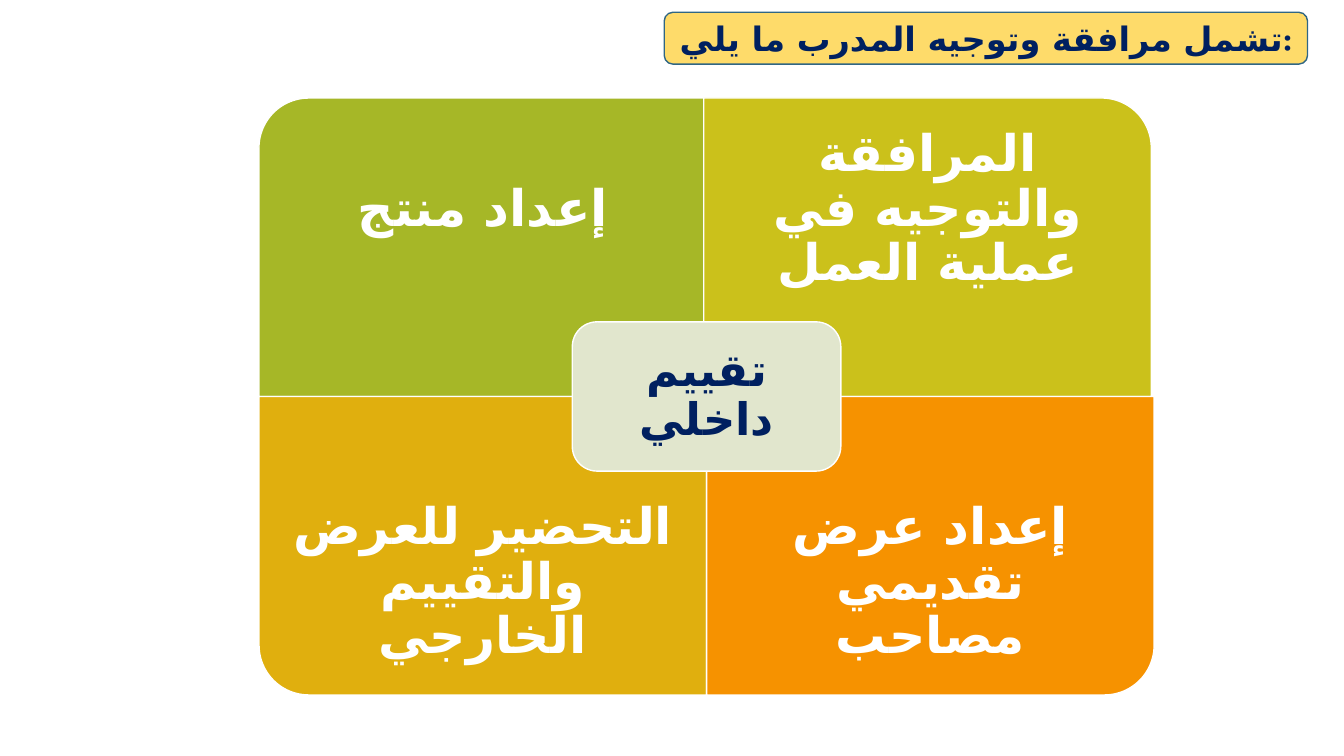
import pptx
import pptx.util
import pptx.dml.color
import pptx.enum.shapes
import pptx.enum.text
import pptx.oxml
import pptx.oxml.ns

Pt = pptx.util.Pt
Shape = pptx.enum.shapes.MSO_SHAPE
Text = pptx.enum.text

HUES = {
    "lime": "A6B727", "olive": "CBC11B", "gold": "E0AF0E", "orange": "F69200",
    "sage": "E1E6CD", "cream": "FEDB6A", "teal": "306684", "navy": "002060", "white": "FFFFFF",
}
FONT = "Karla"
ARAB = "DejaVu Sans"
TITLE = "تشمل مرافقة وتوجيه المدرب ما يلي:"
CORE = "تقييم داخلي"
PARTS = [
    ("إعداد منتج", "lime", 270),
    ("المرافقة والتوجيه في عملية العمل", "olive", 0),
    ("التحضير للعرض والتقييم الخارجي", "gold", 180),
    ("إعداد عرض تقديمي مصاحب", "orange", 90),
]


def tint(name):
    return pptx.dml.color.RGBColor.from_string(HUES[name])


def apply(item, form):
    for key, value in form.items():
        setattr(item, key, value)


def draw(slide, kind, box, fill, line="white"):
    shape = slide.shapes.add_shape(kind, *map(Pt, box))
    shape.shadow.inherit = False
    shape.fill.solid()
    shape.fill.fore_color.rgb = tint(fill)
    shape.line.color.rgb = tint(line)
    shape.line.width = Pt(1)
    return shape


def write(shape, text, size, hue, inset, gap, rtl):
    frame = shape.text_frame
    frame.text = text
    apply(frame, {
        "word_wrap": True, "auto_size": Text.MSO_AUTO_SIZE.NONE,
        "vertical_anchor": Text.MSO_ANCHOR.MIDDLE,
        "margin_left": Pt(inset), "margin_right": Pt(inset),
        "margin_top": Pt(inset), "margin_bottom": Pt(inset),
    })
    para = frame.paragraphs[0]
    apply(para, {"alignment": Text.PP_ALIGN.CENTER, "line_spacing": gap, "space_before": Pt(0)})
    para._p.get_or_add_pPr().set("rtl", str(int(rtl)))
    font = para.runs[0].font
    apply(font, {"name": FONT, "size": Pt(size), "bold": True})
    font.color.rgb = tint(hue)
    script = pptx.oxml.parse_xml(f'<a:cs {pptx.oxml.ns.nsdecls("a")} typeface="{ARAB}"/>')
    font._element.find(pptx.oxml.ns.qn("a:latin")).addnext(script)


def label(slide, box, text, size, hue, inset):
    area = slide.shapes.add_textbox(*map(Pt, box))
    write(area, text, size, hue, inset, 0.9, True)


def banner(slide, box):
    draw(slide, Shape.ROUNDED_RECTANGLE, box, "cream", "teal")
    title = slide.shapes.title
    apply(title, dict(zip(("left", "top", "width", "height"), map(Pt, box))))
    write(title, TITLE, 24, "navy", 3.6, 1.0, False)
    slide.shapes._spTree.append(title._element)


def matrix(slide, box):
    left, top, width, height = box
    wide, high = width / 2, height / 2
    shift = 2
    for spot, (text, fill, turn) in enumerate(PARTS):
        row, col = divmod(spot, 2)
        x = left + col * wide - (shift if spot == 1 else 0)
        y = top + row * high
        across, down = (high, wide) if turn % 180 else (wide, high)
        place = (x + (wide - across) / 2, y + (high - down) / 2, across, down)
        draw(slide, Shape.ROUND_1_RECTANGLE, place, fill).rotation = turn
        label(slide, (x, y + row * high / 4, wide, high * 0.75), text, 36, "white", 20)
    across, down = wide * 0.6, high / 2
    core = (left + (width - across) / 2, top + (height - down) / 2, across, down)
    draw(slide, Shape.ROUNDED_RECTANGLE, core, "sage")
    label(slide, core, CORE, 32, "navy", 14)


def main():
    deck = pptx.Presentation()
    apply(deck, {"slide_width": Pt(960), "slide_height": Pt(540)})
    slide = deck.slides.add_slide(deck.slide_layouts[5])
    matrix(slide, (185, 70, 639.4, 426.4))
    banner(slide, (474.5, 8.8, 459.5, 37))
    deck.save("out.pptx")


if __name__ == "__main__":
    main()
